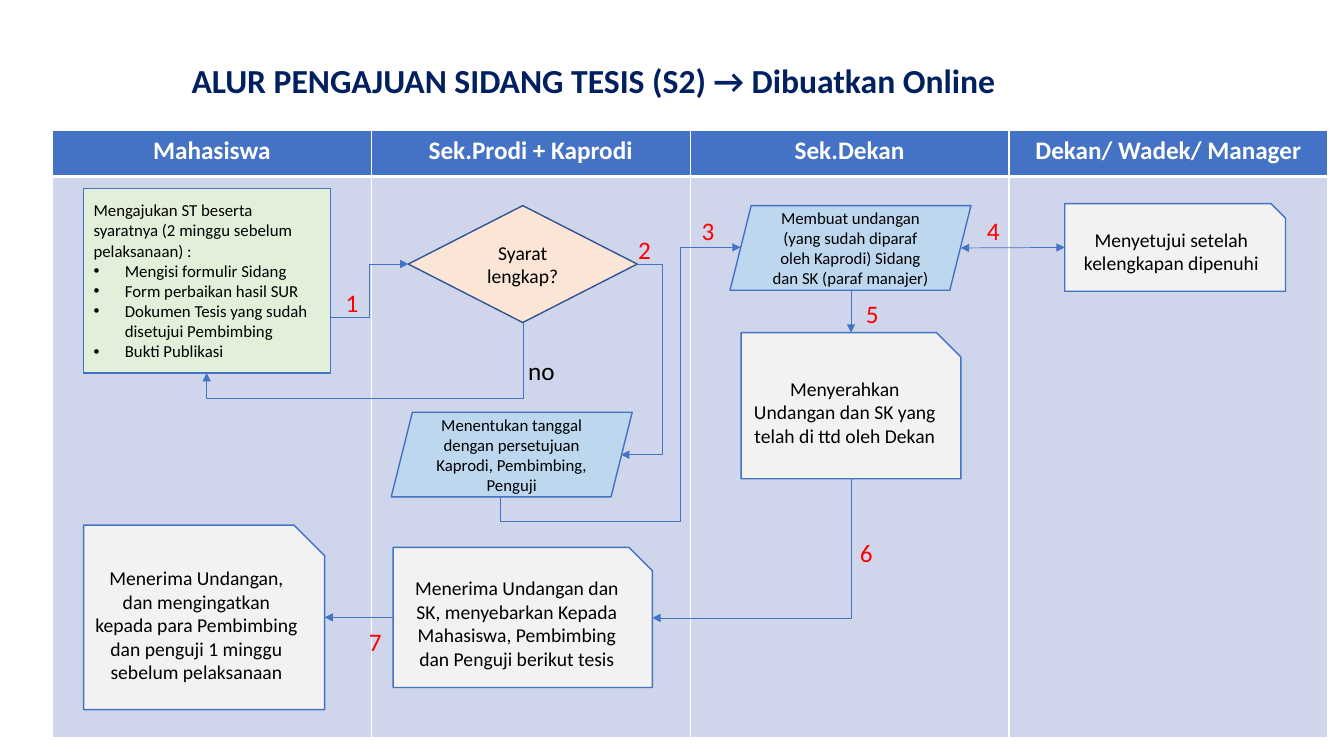
from dataclasses import dataclass

import pptx
import pptx.dml.color
import pptx.enum.shapes
import pptx.enum.text
import pptx.oxml
import pptx.oxml.ns
import pptx.util

Inches = pptx.util.Inches
Pt = pptx.util.Pt
Form = pptx.enum.shapes.MSO_SHAPE
Link = pptx.enum.shapes.MSO_CONNECTOR
Align = pptx.enum.text.PP_ALIGN
Anchor = pptx.enum.text.MSO_ANCHOR


@dataclass(frozen=True)
class Theme:
    font: str = "Calibri"
    small: int = 12
    body: int = 14
    label: int = 18
    title: int = 24
    blue: str = "4472C4"
    edge: str = "325491"
    navy: str = "002060"
    lane: str = "CFD5EA"
    green: str = "E2F0D9"
    peach: str = "FBE5D6"
    sky: str = "BDD7EE"
    gray: str = "F2F2F2"
    red: str = "FF0000"
    black: str = "000000"
    white: str = "FFFFFF"


T = Theme()


def rgb(code):
    return pptx.dml.color.RGBColor.from_string(code)


def put(item, values):
    """Set each named attribute of item."""
    for name, value in values.items():
        setattr(item, name, value)


def fill(item, color):
    item.fill.solid()
    item.fill.fore_color.rgb = rgb(color)


def node(tag, **attrs):
    """Make an empty drawing element."""
    made = pptx.oxml.parse_xml(f"<a:{tag} {pptx.oxml.ns.nsdecls('a')}/>")
    for name, value in attrs.items():
        made.set(name, str(value))
    return made


def write(para, text, size, color, align=Align.LEFT, bold=False):
    para.alignment = align
    run = para.add_run()
    run.text = text
    put(run.font, {"name": T.font, "size": Pt(size), "bold": bold})
    run.font.color.rgb = rgb(color)


def bullet(para):
    props = para._p.get_or_add_pPr()
    props.set("marL", str(Inches(0.31)))
    props.set("indent", str(-Inches(0.31)))
    props.append(node("buFont", typeface="Arial"))
    props.append(node("buChar", char="•"))


def title(slide, text):
    head = slide.shapes.title
    put(head, {"left": Inches(1.8), "top": Inches(0.54),
               "width": Inches(8.27), "height": Inches(0.5)})
    put(head.text_frame, {"word_wrap": False, "vertical_anchor": Anchor.TOP,
                          "auto_size": pptx.enum.text.MSO_AUTO_SIZE.NONE})
    write(head.text_frame.paragraphs[0], text, T.title, T.navy, bold=True)


def border(cell, side, width):
    """Draw a white line along one side of a cell."""
    line = node(side, w=Pt(width))
    paint = node("solidFill")
    paint.append(node("srgbClr", val=T.white))
    line.append(paint)
    cell._tc.get_or_add_tcPr().insert(0, line)


def lanes(slide, names):
    frame = slide.shapes.add_table(2, len(names), Inches(0.52), Inches(1.29),
                                   Inches(12.65), Inches(6.03))
    table = frame.table
    for row, high in zip(table.rows, (0.46, 5.57)):
        row.height = Inches(high)
    for col, name in enumerate(names):
        top, low = table.cell(0, col), table.cell(1, col)
        fill(top, T.blue)
        fill(low, T.lane)
        border(top, "lnB", 3)
        border(low, "lnT", 3)
        write(top.text_frame.paragraphs[0], name, T.label, T.white,
              Align.CENTER, True)


def box(slide, form, at, color, text="", size=T.body, edge=T.blue):
    shape = slide.shapes.add_shape(form, *map(Inches, at))
    shape.shadow.inherit = False
    fill(shape, color)
    shape.line.color.rgb = rgb(edge)
    shape.line.width = Pt(1)
    put(shape.text_frame, {"word_wrap": True, "vertical_anchor": Anchor.MIDDLE})
    if text:
        write(shape.text_frame.paragraphs[0], text, size, T.black, Align.CENTER)
    return shape


def form_list(slide, at, lead, items):
    frame = box(slide, Form.RECTANGLE, at, T.green).text_frame
    write(frame.paragraphs[0], lead, T.small, T.black)
    for item in items:
        para = frame.add_paragraph()
        write(para, item, T.small, T.black)
        bullet(para)


def label(slide, text, left, top, color=T.red, width=0.33):
    frame = slide.shapes.add_textbox(Inches(left), Inches(top), Inches(width),
                                     Inches(0.4)).text_frame
    frame.word_wrap = False
    write(frame.paragraphs[0], text, T.label, color)


def arrow(slide, ends, kind=Link.STRAIGHT, both=False):
    line = slide.shapes.add_connector(kind, *map(Inches, ends))
    line.line.color.rgb = rgb(T.blue)
    line.line.width = Pt(0.5)
    stroke = line.line._get_or_add_ln()
    if both:
        stroke.append(node("headEnd", type="triangle"))
    stroke.append(node("tailEnd", type="triangle"))
    line.element.spPr.append(node("effectLst"))
    return line


def elbow(slide, ends, preset="bentConnector3", turn=0, bends=()):
    """Draw a bent arrow; ends are given before the turn in degrees."""
    props = arrow(slide, ends, Link.ELBOW).element.spPr
    if turn:
        props.xfrm.set("rot", str(turn * 60000))
    shape = props.find(pptx.oxml.ns.qn("a:prstGeom"))
    shape.set("prst", preset)
    guides = shape.find(pptx.oxml.ns.qn("a:avLst"))
    if guides is None:
        guides = node("avLst")
        shape.append(guides)
    for num, bend in enumerate(bends, 1):
        guides.append(node("gd", name=f"adj{num}",
                           fmla=f"val {round(bend * 100000)}"))


def main():
    deck = pptx.Presentation()
    put(deck, {"slide_width": Inches(13.33), "slide_height": Inches(7.5)})
    slide = deck.slides.add_slide(deck.slide_layouts[5])
    lanes(slide, ["Mahasiswa", "Sek.Prodi + Kaprodi", "Sek.Dekan",
                  "Dekan/ Wadek/ Manager"])
    title(slide, "ALUR PENGAJUAN SIDANG TESIS (S2) → Dibuatkan Online")

    form_list(slide, (0.83, 1.87, 2.45, 1.83),
              "Mengajukan ST beserta syaratnya (2 minggu sebelum pelaksanaan) :",
              ["Mengisi formulir Sidang", "Form perbaikan hasil SUR",
               "Dokumen Tesis yang sudah disetujui Pembimbing",
               "Bukti Publikasi"])
    box(slide, Form.DIAMOND, (4.05, 2.04, 2.27, 1.16), T.peach,
        "Syarat lengkap?", edge=T.edge)
    for at, text in (
            ((7.24, 2.04, 2.39, 0.84), "Membuat undangan (yang sudah diparaf "
             "oleh Kaprodi) Sidang dan SK (paraf manajer)"),
            ((3.88, 4.09, 2.39, 0.84), "Menentukan tanggal dengan persetujuan "
             "Kaprodi, Pembimbing, Penguji")):
        box(slide, Form.PARALLELOGRAM, at, T.sky, text, T.small)
    hand, spread, get, agree = [
        box(slide, Form.SNIP_1_RECTANGLE, at, T.gray, text) for at, text in (
            ((7.35, 3.3, 2.18, 1.45),
             "Menyerahkan Undangan dan SK yang telah di ttd oleh Dekan"),
            ((3.9, 5.43, 2.57, 1.39),
             "Menerima Undangan dan SK, menyebarkan Kepada Mahasiswa, "
             "Pembimbing dan Penguji berikut tesis"),
            ((0.83, 5.21, 2.39, 1.83),
             "Menerima Undangan, dan mengingatkan kepada para Pembimbing "
             "dan penguji 1 minggu sebelum pelaksanaan"),
            ((10.56, 2.02, 2.19, 0.87),
             "Menyetujui setelah kelengkapan dipenuhi"))]

    elbow(slide, (3.27, 3.15, 4.05, 2.62))
    elbow(slide, (3.37, 1.88, 3.87, 5.02), turn=90, bends=[1.5])
    elbow(slide, (6.32, 2.62, 6.16, 4.51), bends=[-1.58])
    elbow(slide, (7.39, 4.88, 4.92, 2.5), "bentConnector4", 90, [-0.1, 0.75])
    elbow(slide, (6.76, 4.45, 8.15, 6.42), "bentConnector2", 90)
    arrow(slide, (8.44, 2.88, 8.44, 3.3)).end_connect(hand, 0)
    arrow(slide, (9.53, 2.46, 10.56, 2.46), both=True).end_connect(agree, 1)
    back = arrow(slide, (3.9, 6.13, 3.22, 6.13))
    back.begin_connect(spread, 1)
    back.end_connect(get, 3)

    label(slide, "no", 5.14, 3.48, T.black, 0.47)
    spots = ((3.33, 2.8), (6.23, 2.28), (6.86, 2.09), (9.69, 2.09),
             (8.49, 2.91), (8.43, 5.28), (3.56, 6.16))
    for step, spot in enumerate(spots, 1):
        label(slide, str(step), *spot)
    deck.save("out.pptx")


if __name__ == "__main__":
    main()
